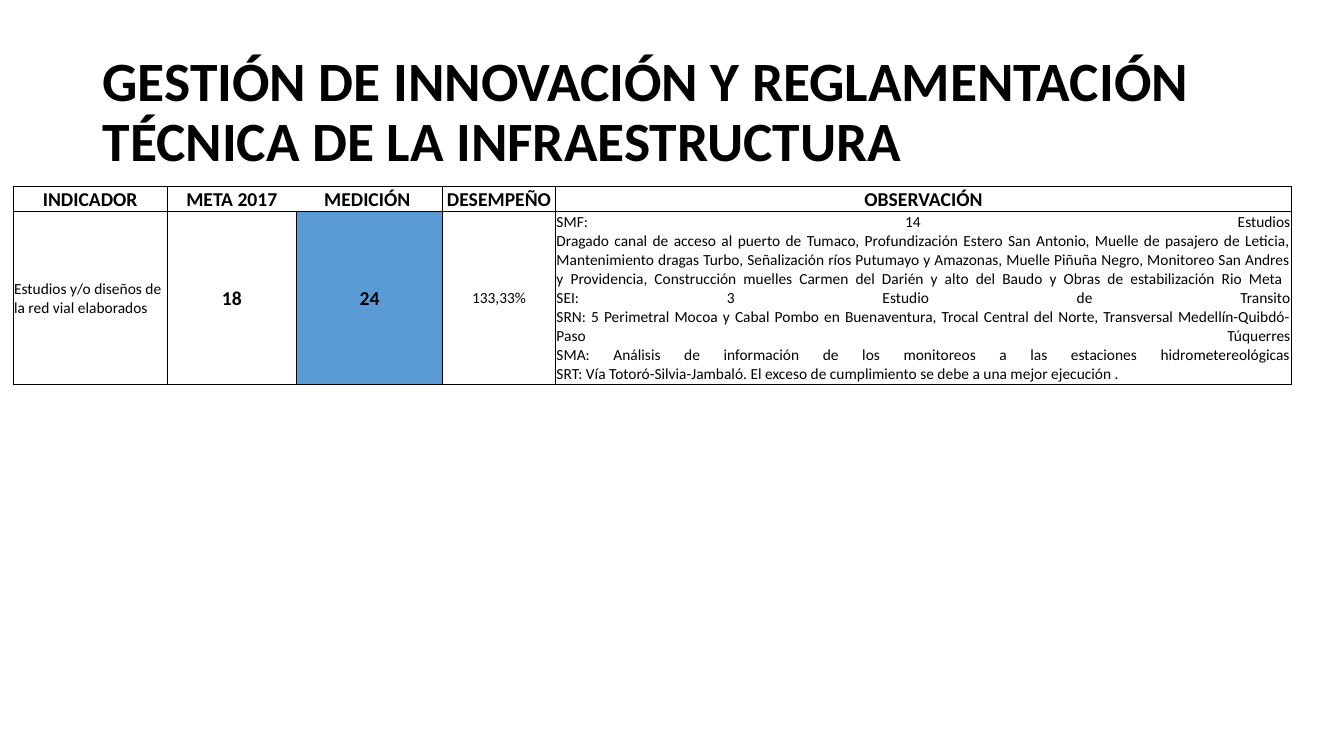
from lxml import etree
from pptx import Presentation
from pptx.dml.color import RGBColor
from pptx.enum.text import MSO_ANCHOR, PP_ALIGN
from pptx.oxml.ns import qn
from pptx.util import Inches, Pt

MIDDLE = MSO_ANCHOR.MIDDLE
LEFT, CENTER, FULL = PP_ALIGN.LEFT, PP_ALIGN.CENTER, PP_ALIGN.JUSTIFY
HUES = {"ink": "000000", "blue": "5B9BD5"}
HEAD = {"size": Pt(14), "bold": True}
BODY = {"size": Pt(11), "bold": False}


def write(frame, text, align, style):
    para = frame.paragraphs[0]
    para.text = text
    para.alignment = align
    for run in para.runs:
        run.font.name = "Calibri"
        run.font.color.rgb = RGBColor.from_string(HUES["ink"])
        for name, value in style.items():
            setattr(run.font, name, value)
    return para


def rule(cell, widths):
    """Draw the left, right, top and bottom borders; width 0 hides one."""
    props = cell._tc.get_or_add_tcPr()
    for spot, (side, width) in enumerate(zip("LRTB", widths)):
        line = etree.Element(qn(f"a:ln{side}"), w=str(Pt(width)))
        if width:
            fill = etree.SubElement(line, qn("a:solidFill"))
            etree.SubElement(fill, qn("a:srgbClr"), val=HUES["ink"])
        else:
            etree.SubElement(line, qn("a:noFill"))
        props.insert(spot, line)


deck = Presentation()
deck.slide_width, deck.slide_height = Inches(13.33), Inches(7.5)
slide = deck.slides.add_slide(deck.slide_layouts[6])

# Title
title = slide.shapes.add_textbox(Inches(0.92), Inches(0.4), Inches(11.5), Inches(1.45))
frame = title.text_frame
frame.word_wrap = True
frame.vertical_anchor = MIDDLE
para = write(
    frame,
    "GESTIÓN DE INNOVACIÓN Y REGLAMENTACIÓN TÉCNICA DE LA INFRAESTRUCTURA",
    LEFT,
    {"size": Pt(39.6), "bold": True},
)
para.line_spacing = 0.9

# Indicator table
notes = "\n".join([
    "SMF: 14 Estudios",
    "Dragado canal de acceso al puerto de Tumaco, Profundización Estero San Antonio, "
    "Muelle de pasajero de Leticia, Mantenimiento dragas Turbo, Señalización ríos "
    "Putumayo y Amazonas, Muelle Piñuña Negro, Monitoreo San Andres y Providencia, "
    "Construcción muelles Carmen del Darién y alto del Baudo y Obras de "
    "estabilización Rio Meta ",
    "SEI: 3 Estudio de Transito",
    "SRN: 5 Perimetral Mocoa y Cabal Pombo en Buenaventura, Trocal Central del Norte, "
    "Transversal Medellín-Quibdó-Paso Túquerres",
    "SMA: Análisis de información de los monitoreos a las estaciones hidrometereológicas",
    "SRT: Vía Totoró-Silvia-Jambaló. El exceso de cumplimiento se debe a una mejor "
    "ejecución .",
])
# Column width, heading, value, value alignment, value style
columns = [
    (1.53, "INDICADOR", "Estudios y/o diseños de la red vial elaborados", LEFT, BODY),
    (1.28, "META 2017", "18", CENTER, HEAD),
    (1.45, "MEDICIÓN ", "24", CENTER, HEAD),
    (1.12, "DESEMPEÑO", "133,33%", CENTER, BODY),
    (7.3, "OBSERVACIÓN", notes, FULL, BODY),
]
heights = [0.25, 1.71]
borders = [
    [(0.5, 0.5, 1, 1), (0.5, 0, 1, 1), (0, 0.5, 1, 1), (0.5,) * 4, (0.5, 1, 0.5, 0.5)],
    [(0.5, 0.5, 1, 0.5)] * 3 + [(0.5,) * 4, (0.5, 1, 0.5, 0.5)],
]
table = slide.shapes.add_table(
    len(heights), len(columns), Inches(0.13), Inches(1.85),
    Inches(sum(col[0] for col in columns)), Inches(sum(heights)),
).table
table.first_row = table.horz_banding = False
for row, height in zip(table.rows, heights):
    row.height = Inches(height)

for c, (width, label, value, align, style) in enumerate(columns):
    table.columns[c].width = Inches(width)
    entries = [(label, CENTER, HEAD), (value, align, style)]
    for r, entry in enumerate(entries):
        cell = table.cell(r, c)
        cell.margin_left = cell.margin_right = cell.margin_top = Inches(0.01)
        cell.margin_bottom = 0
        cell.vertical_anchor = MIDDLE
        cell.fill.background()
        write(cell.text_frame, *entry)
        rule(cell, borders[r][c])

score = table.cell(1, 2)
score.fill.solid()
score.fill.fore_color.rgb = RGBColor.from_string(HUES["blue"])

deck.save("out.pptx")
